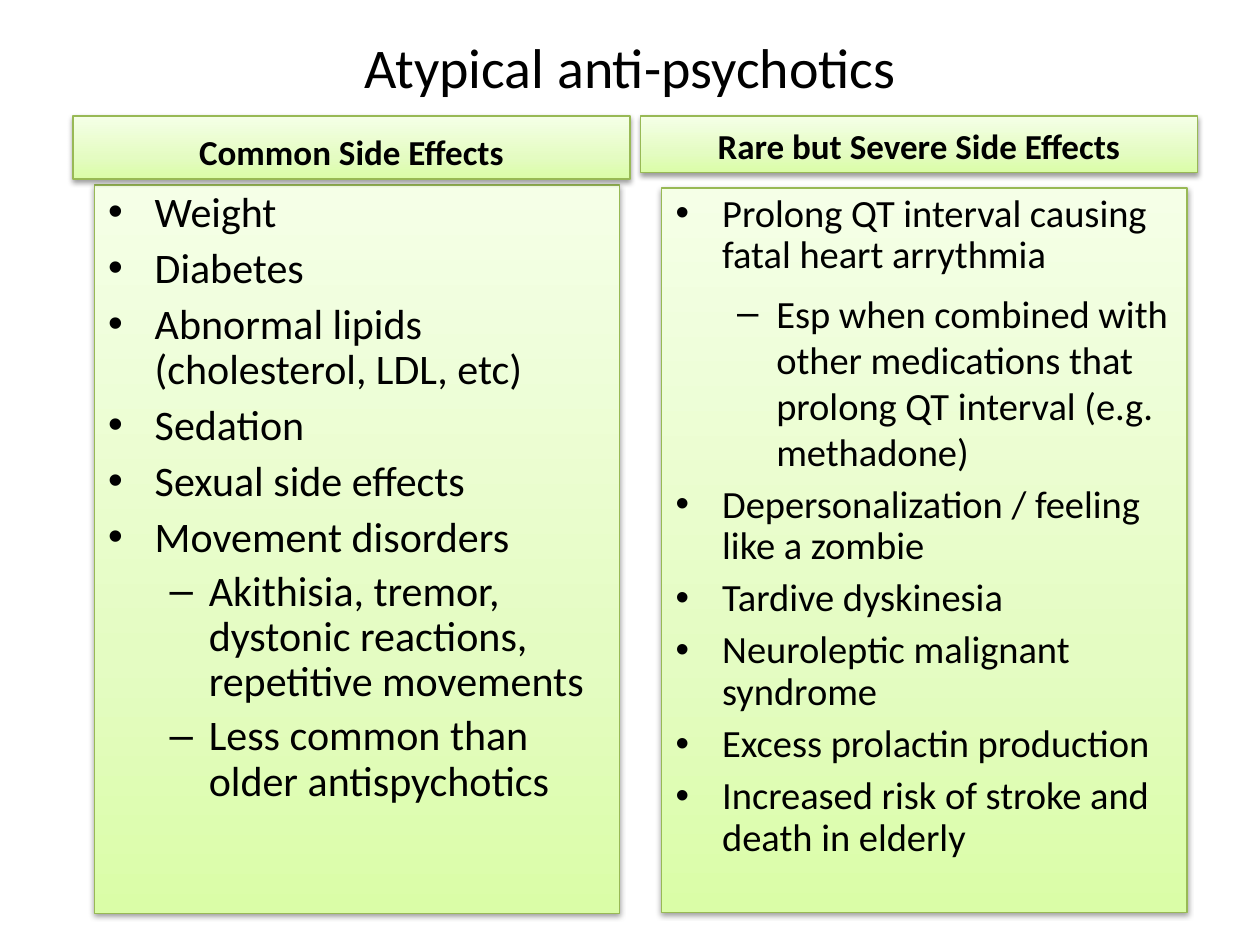
from pptx import Presentation
from pptx.dml.color import RGBColor
from pptx.enum.shapes import MSO_SHAPE
from pptx.enum.text import MSO_ANCHOR, PP_ALIGN
from pptx.oxml import parse_xml
from pptx.oxml.ns import nsdecls, qn
from pptx.util import Cm, Pt

TITLE = "Atypical anti-psychotics"
PANELS = [
    {
        "head": "Common Side Effects", "left": 1.47, "tall": 1.27,
        "top": 3.73, "depth": 14.68, "size": 24,
        "items": [
            (0, "Weight"),
            (0, "Diabetes"),
            (0, "Abnormal lipids (cholesterol, LDL, etc)"),
            (0, "Sedation"),
            (0, "Sexual side effects"),
            (0, "Movement disorders"),
            (1, "Akithisia, tremor, dystonic reactions, repetitive movements"),
            (1, "Less common than older antispychotics"),
        ],
        "sub": {"before": 5, "line": 0.9},
    },
    {
        "head": "Rare but Severe Side Effects", "left": 12.91, "tall": 1.14,
        "top": 3.79, "depth": 14.6, "size": 22,
        "items": [
            (0, "Prolong QT interval causing fatal heart arrythmia"),
            (1, "Esp when combined with other medications that "
                "prolong QT interval (e.g. methadone)"),
            (0, "Depersonalization / feeling like a zombie"),
            (0, "Tardive dyskinesia"),
            (0, "Neuroleptic malignant syndrome"),
            (0, "Excess prolactin production"),
            (0, "Increased risk of stroke and death in elderly"),
        ],
        "sub": {"before": 7, "line": 1.0},
    },
]
COLORS = {"text": "000000", "edge": "98B955", "shade": "000000",
          "low": "DAFDA7", "mid": "E4FCC2", "high": "F5FFE7"}
STOPS = [(0, "low"), (35, "mid"), (100, "high")]
BULLETS = [("•", 0.97, -0.94), ("–", 2.06, -0.79)]
HEAD_TOP, HEAD_WIDE = 2.34, 11.23
BODY_WIDE = 10.59


def write(shape, text, size=20, bold=False, align=PP_ALIGN.LEFT,
          anchor=MSO_ANCHOR.TOP, before=0, line=None, level=None, more=False):
    frame = shape.text_frame
    frame.word_wrap = True
    frame.vertical_anchor = anchor
    para = frame.add_paragraph() if more else frame.paragraphs[0]
    para.alignment = align
    para.space_before = Pt(before)
    if line:
        para.line_spacing = line
    run = para.add_run()
    run.text = text
    font = run.font
    font.name, font.size, font.bold = "Calibri", Pt(size), bold
    font.color.rgb = RGBColor.from_string(COLORS["text"])
    if level is not None:
        mark, margin, indent = BULLETS[level]
        para.level = level
        props = para._p.get_or_add_pPr()
        props.set("marL", str(Cm(margin)))
        props.set("indent", str(Cm(indent)))
        props.append(parse_xml(f'<a:buFont {nsdecls("a")} typeface="Arial"/>'))
        props.append(parse_xml(f'<a:buChar {nsdecls("a")} char="{mark}"/>'))


def panel(slide, left, top, wide, tall):
    box = slide.shapes.add_shape(
        MSO_SHAPE.RECTANGLE, Cm(left), Cm(top), Cm(wide), Cm(tall))
    box.fill.gradient()
    props = box._element.spPr
    stops = "".join(
        f'<a:gs pos="{pos * 1000}"><a:srgbClr val="{COLORS[name]}"/></a:gs>'
        for pos, name in STOPS)
    props.replace(props.find(qn("a:gradFill")), parse_xml(
        f'<a:gradFill {nsdecls("a")} rotWithShape="1"><a:gsLst>{stops}</a:gsLst>'
        '<a:lin ang="16200000" scaled="0"/></a:gradFill>'))
    box.line.color.rgb = RGBColor.from_string(COLORS["edge"])
    box.line.width = Pt(0.75)
    box.shadow.inherit = False
    props.find(qn("a:effectLst")).append(parse_xml(
        f'<a:outerShdw {nsdecls("a")} blurRad="{Pt(3.1)}" dist="{Pt(1.6)}" '
        f'dir="5400000" rotWithShape="0"><a:srgbClr val="{COLORS["shade"]}">'
        '<a:alpha val="38000"/></a:srgbClr></a:outerShdw>'))
    return box


def main():
    deck = Presentation()
    deck.slide_width, deck.slide_height = Cm(25.4), Cm(19.05)
    slide = deck.slides.add_slide(deck.slide_layouts[6])

    title = slide.shapes.add_textbox(Cm(1.91), Cm(0.76), Cm(21.59), Cm(1.14))
    write(title, TITLE, size=32, align=PP_ALIGN.CENTER, anchor=MSO_ANCHOR.MIDDLE)

    for part in PANELS:
        inset = (HEAD_WIDE - BODY_WIDE) / 2 + 0.11
        body = panel(slide, part["left"] + inset, part["top"],
                     BODY_WIDE, part["depth"])
        for row, (level, text) in enumerate(part["items"]):
            gaps = part["sub"] if level else {"before": 6, "line": 0.9}
            write(body, text, size=part["size"], level=level,
                  more=row > 0, **gaps)
        head = panel(slide, part["left"], HEAD_TOP, HEAD_WIDE, part["tall"])
        write(head, part["head"], bold=True, align=PP_ALIGN.CENTER,
              anchor=MSO_ANCHOR.BOTTOM, before=4)

    deck.save("out.pptx")


if __name__ == "__main__":
    main()
